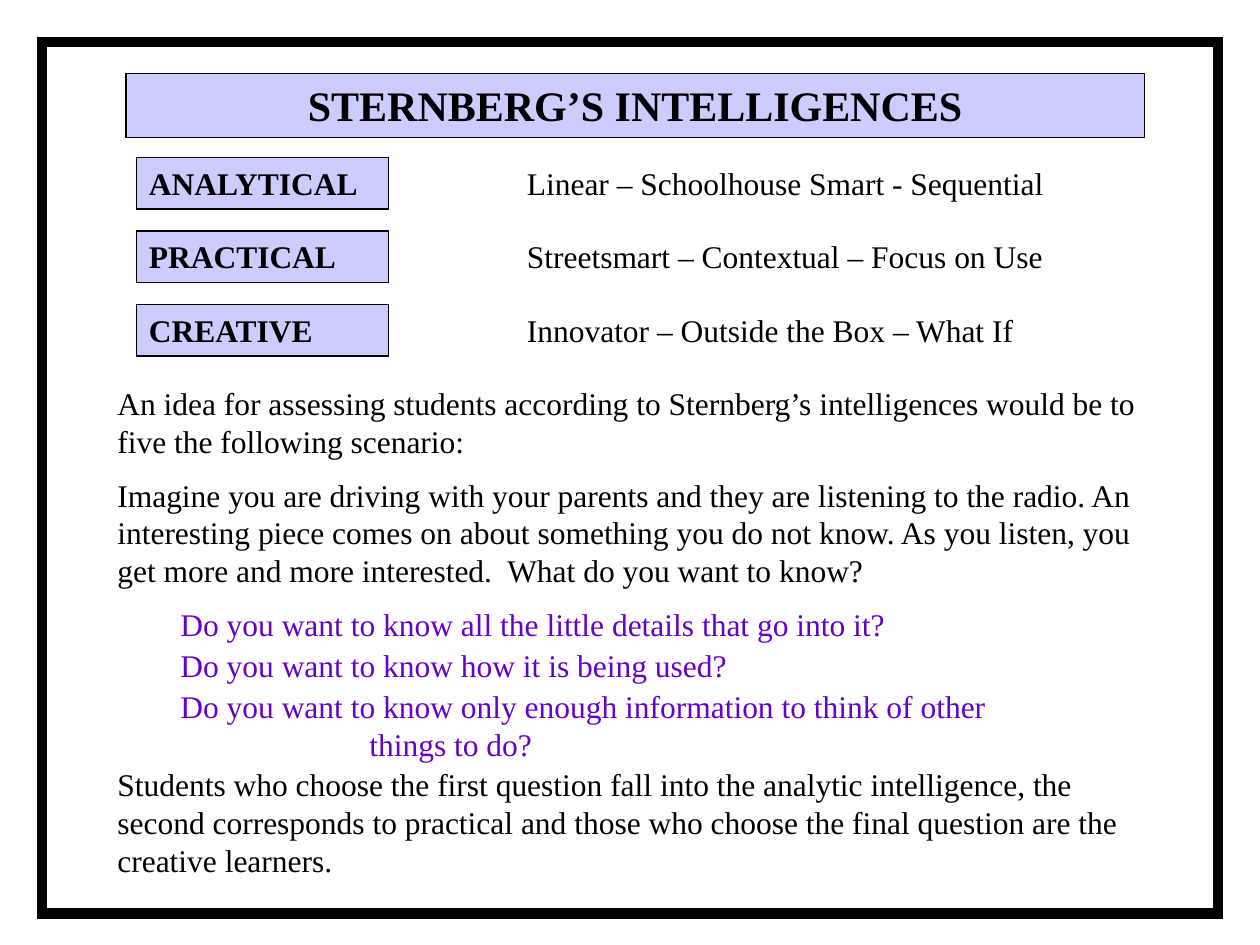
from dataclasses import dataclass

from lxml import etree
from pptx import Presentation
from pptx.dml.color import RGBColor
from pptx.enum import shapes, text
from pptx.oxml.ns import qn
from pptx.util import Pt


@dataclass(frozen=True)
class Theme:
    font: str = "Times New Roman"
    black: str = "000000"
    white: str = "FFFFFF"
    lavender: str = "CCCCFF"
    purple: str = "6600CC"
    title: float = 24
    body: float = 18


THEME = Theme()

INTELLIGENCES = [
    ("ANALYTICAL", "Linear – Schoolhouse Smart - Sequential", 348),
    ("PRACTICAL", "Streetsmart – Contextual – Focus on Use", 366),
    ("CREATIVE", "Innovator – Outside the Box – What If", 372),
]

QUESTION = dict(color=THEME.purple, left=36)
SCENARIO = [
    ("An idea for assessing students according to Sternberg’s intelligences "
     "would be to five the following scenario:", {}),
    ("Imagine you are driving with your parents and they are listening to the "
     "radio. An interesting piece comes on about something you do not know. As "
     "you listen, you get more and more interested.  What do you want to know?",
     dict(before=9)),
    ("Do you want to know all the little details that go into it?",
     dict(QUESTION, before=9)),
    ("Do you want to know how it is being used?", dict(QUESTION, before=1.8)),
    ("Do you want to know only enough information to think of other\v"
     "things to do?", dict(QUESTION, before=1.8, left=144, first=-108)),
    ("Students who choose the first question fall into the analytic "
     "intelligence, the second corresponds to practical and those who choose "
     "the final question are the creative learners.", dict(before=1.8)),
]


def write(p, words, size=THEME.body, color=THEME.black, bold=False,
          align=text.PP_ALIGN.LEFT, before=0, left=0, first=0):
    """Fill a paragraph; left and first are its indents in points."""
    p.text = words
    p.alignment = align
    p.space_before = Pt(before)
    pPr = p._p.get_or_add_pPr()
    pPr.set("marL", str(Pt(left)))
    pPr.set("indent", str(Pt(first)))
    for r in p.runs:
        r.font.name = THEME.font
        r.font.size = Pt(size)
        r.font.bold = bold
        r.font.color.rgb = RGBColor.from_string(color)


def paint(sp, fill, line_width):
    """Fill the shape and give it a black line with square corners."""
    sp.fill.solid()
    sp.fill.fore_color.rgb = RGBColor.from_string(fill)
    sp.line.color.rgb = RGBColor.from_string(THEME.black)
    sp.line.width = Pt(line_width)
    ln = sp.element.spPr.find(qn("a:ln"))
    etree.SubElement(ln, qn("a:miter")).set("lim", "800000")


def open_frame(sp, auto_size=text.MSO_AUTO_SIZE.SHAPE_TO_FIT_TEXT):
    """Wrap text from the top and return the text frame."""
    tf = sp.text_frame
    tf.word_wrap = True
    tf.vertical_anchor = text.MSO_ANCHOR.TOP
    tf.auto_size = auto_size
    return tf


def add_rect(s, box, fill, line_width):
    sp = s.shapes.add_shape(shapes.MSO_SHAPE.RECTANGLE, *map(Pt, box))
    sp.shadow.inherit = False
    paint(sp, fill, line_width)
    return sp


def add_text(s, box, paragraphs):
    tf = open_frame(s.shapes.add_textbox(*map(Pt, box)))
    for i, (words, style) in enumerate(paragraphs):
        write(tf.add_paragraph() if i else tf.paragraphs[0], words, **style)


def add_border(s, box):
    """Draw the page border behind the title."""
    border = add_rect(s, box, THEME.white, 6)
    s.shapes.title.element.addprevious(border.element)


def set_title(s, box, words):
    sp = s.shapes.title
    sp.left, sp.top, sp.width, sp.height = map(Pt, box)
    paint(sp, THEME.lavender, 0.75)
    tf = open_frame(sp, text.MSO_AUTO_SIZE.NONE)
    write(tf.paragraphs[0], words, size=THEME.title, bold=True,
          align=text.PP_ALIGN.CENTER)


def add_intelligences(s, box, rows):
    """Stack label boxes with their descriptions to the right."""
    x, y, label_width, height = box
    for i, (label, description, width) in enumerate(rows):
        top = y + 42 * i
        sp = add_rect(s, (x, top, label_width, height), THEME.lavender, 0.75)
        write(open_frame(sp).paragraphs[0], label, bold=True)
        add_text(s, (x + 216, top, width, height), [(description, {})])


def main():
    prs = Presentation()
    prs.slide_width, prs.slide_height = Pt(720), Pt(540)
    s = prs.slides.add_slide(prs.slide_layouts[5])
    add_border(s, (24, 24, 672, 498))
    set_title(s, (72, 42, 582, 36.7), "STERNBERG’S INTELLIGENCES")
    add_intelligences(s, (78, 90, 144, 29.5), INTELLIGENCES)
    add_text(s, (60, 216, 612, 295), SCENARIO)
    prs.save("out.pptx")


if __name__ == "__main__":
    main()
